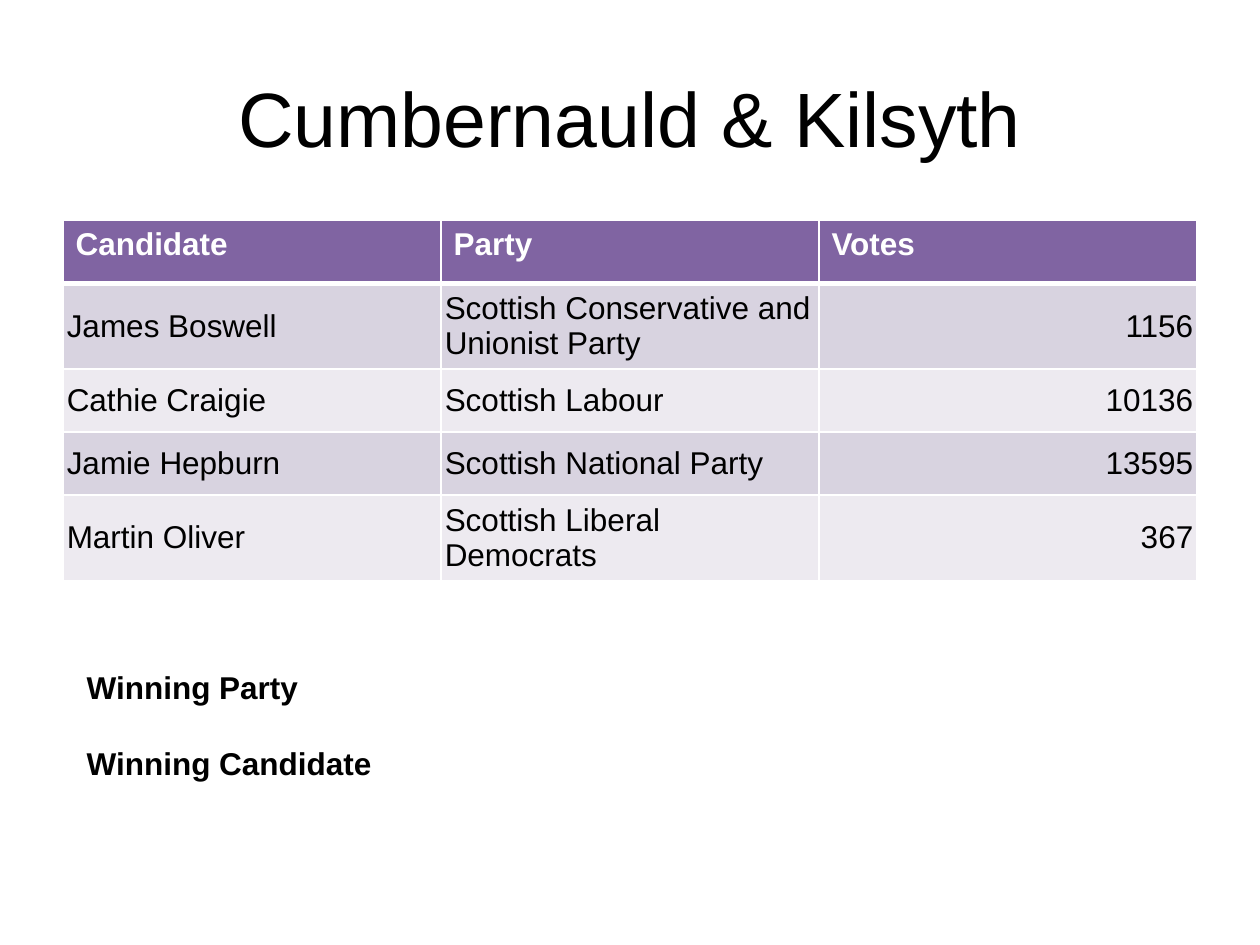
from dataclasses import dataclass

from lxml.etree import SubElement
from pptx import Presentation
from pptx.dml.color import RGBColor
from pptx.enum.text import MSO_ANCHOR, PP_ALIGN
from pptx.oxml.ns import qn
from pptx.util import Inches, Pt

WHITE = RGBColor(0xFF, 0xFF, 0xFF)
BLACK = RGBColor(0x00, 0x00, 0x00)
PURPLE = RGBColor(0x80, 0x64, 0xA2)
BAND_DARK = RGBColor(0xD8, 0xD3, 0xE0)
BAND_LIGHT = RGBColor(0xED, 0xEA, 0xF0)
FONT = "Arial"


@dataclass
class Result:
    candidate: str
    party: str
    votes: int


HEADERS = ("Candidate", "Party", "Votes")
RESULTS = (
    Result("James Boswell", "Scottish Conservative and Unionist Party", 1156),
    Result("Cathie Craigie", "Scottish Labour", 10136),
    Result("Jamie Hepburn", "Scottish National Party", 13595),
    Result("Martin Oliver", "Scottish Liberal Democrats", 367),
)


def add_text(p, text: str, size: int, color: RGBColor, bold: bool = False) -> None:
    r = p.add_run()
    r.text = text
    r.font.name = FONT
    r.font.size = Pt(size)
    r.font.bold = bold
    r.font.color.rgb = color


def set_borders(cell, top: int, bottom: int) -> None:
    tcPr = cell._tc.get_or_add_tcPr()
    widths = {"a:lnL": 1, "a:lnR": 1, "a:lnT": top, "a:lnB": bottom}
    for position, (tag, width) in enumerate(widths.items()):
        ln = SubElement(tcPr, qn(tag), w=str(Pt(width)))
        fill = SubElement(ln, qn("a:solidFill"))
        SubElement(fill, qn("a:srgbClr"), val=str(WHITE))
        tcPr.insert(position, ln)


def fill_header(cell, text: str) -> None:
    cell.fill.solid()
    cell.fill.fore_color.rgb = PURPLE
    set_borders(cell, top=1, bottom=3)
    add_text(cell.text_frame.paragraphs[0], text, 18, WHITE, bold=True)


def fill_body(cell, text: str, fill: RGBColor, align: PP_ALIGN, top: int) -> None:
    cell.fill.solid()
    cell.fill.fore_color.rgb = fill
    cell.vertical_anchor = MSO_ANCHOR.MIDDLE
    cell.margin_left = cell.margin_right = Inches(0.03)
    cell.margin_top = cell.margin_bottom = Inches(0.06)
    set_borders(cell, top=top, bottom=1)
    p = cell.text_frame.paragraphs[0]
    p.alignment = align
    add_text(p, text, 18, BLACK)


def add_results(s) -> None:
    frame = s.shapes.add_table(len(RESULTS) + 1, len(HEADERS),
                               Inches(0.5), Inches(1.75), Inches(9), Inches(2.5))
    table = frame.table
    for col, header in enumerate(HEADERS):
        fill_header(table.cell(0, col), header)
    aligns = (PP_ALIGN.LEFT, PP_ALIGN.LEFT, PP_ALIGN.RIGHT)
    for row, result in enumerate(RESULTS, start=1):
        fill = BAND_DARK if row % 2 else BAND_LIGHT
        values = (result.candidate, result.party, str(result.votes))
        for col, (value, align) in enumerate(zip(values, aligns)):
            fill_body(table.cell(row, col), value, fill, align, top=3 if row == 1 else 1)
    frame.height = Inches(2.96)


def add_winner_labels(s) -> None:
    sp = s.shapes.add_textbox(Inches(0.59), Inches(5.25), Inches(8.5), Inches(1.01))
    tf = sp.text_frame
    tf.word_wrap = True
    add_text(tf.paragraphs[0], "Winning Party", 18, BLACK, bold=True)
    p = tf.add_paragraph()
    p.space_before = Pt(22)
    add_text(p, "Winning Candidate", 18, BLACK, bold=True)


def main() -> None:
    prs = Presentation()
    prs.slide_width, prs.slide_height = Inches(10), Inches(7.5)
    s = prs.slides.add_slide(prs.slide_layouts[5])
    title = s.shapes.title
    title.left, title.top = Inches(0.5), Inches(0.3)
    title.width, title.height = Inches(9), Inches(1.25)
    tf = title.text_frame
    tf.vertical_anchor = MSO_ANCHOR.MIDDLE
    p = tf.paragraphs[0]
    p.alignment = PP_ALIGN.CENTER
    add_text(p, "Cumbernauld & Kilsyth", 44, BLACK)
    add_results(s)
    add_winner_labels(s)
    prs.save("out.pptx")


if __name__ == "__main__":
    main()
